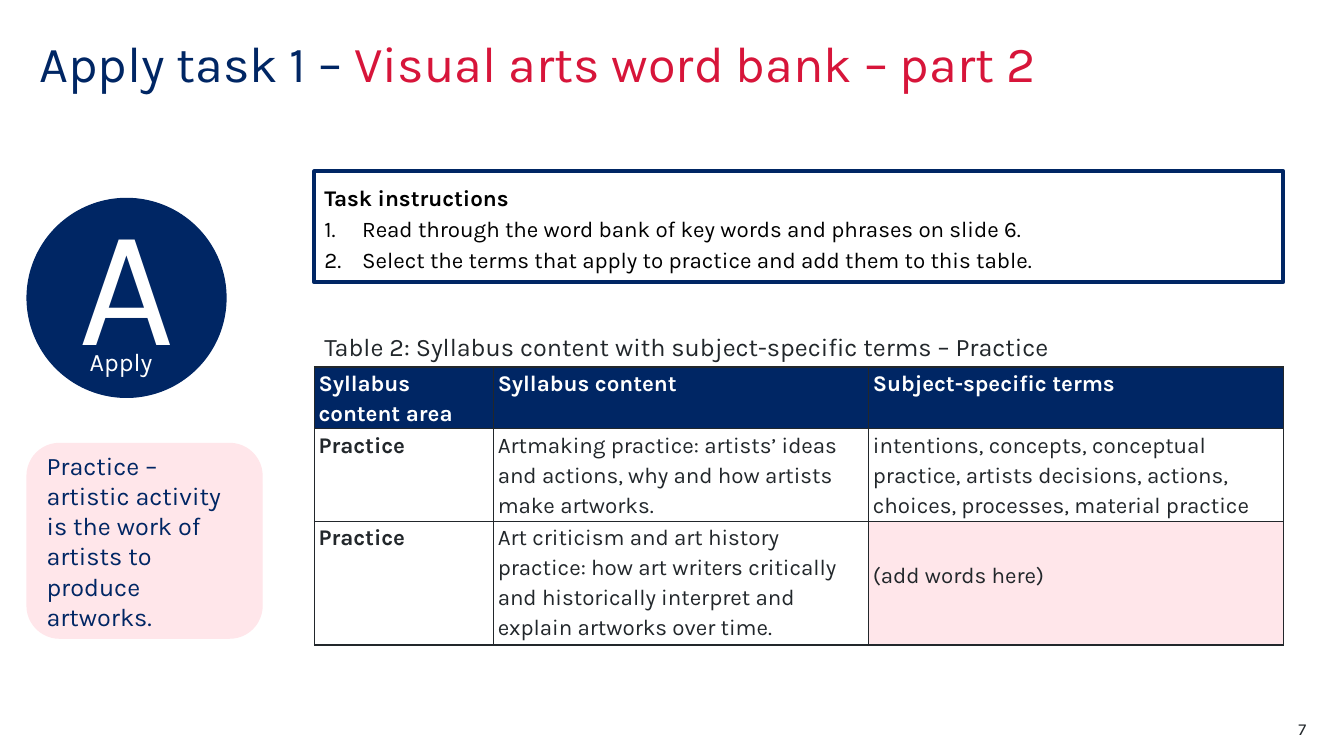
from dataclasses import dataclass

from lxml.etree import SubElement
from pptx import Presentation
from pptx.dml.color import RGBColor
from pptx.enum.shapes import MSO_SHAPE
from pptx.enum.text import MSO_ANCHOR, MSO_AUTO_SIZE, PP_ALIGN
from pptx.oxml.ns import qn
from pptx.util import Pt

COLOURS = {"navy": "002664", "red": "D7153A", "pink": "FFE6EA",
           "white": "FFFFFF", "black": "000000", "ink": "22272B"}
FONT = "Karla"
COLUMN_WIDTHS = (128, 268, 296)
ROW_HEIGHTS = (44, 66, 88)


@dataclass(frozen=True)
class Span:
    """A run of text with its look."""
    text: str
    size: float
    colour: str
    bold: bool = False


@dataclass(frozen=True)
class Line:
    """A paragraph of spans."""
    spans: tuple[Span, ...]
    align: PP_ALIGN = PP_ALIGN.LEFT
    spacing: float = 1.0
    numbered: bool = False


@dataclass(frozen=True)
class Panel:
    """A block of text, with an outlined preset shape if one is named."""
    bounds: tuple[float, float, float, float]
    lines: tuple[Line, ...]
    margins: tuple[float, float, float, float] = (7.2, 3.6, 7.2, 3.6)
    anchor: MSO_ANCHOR = MSO_ANCHOR.MIDDLE
    preset: MSO_SHAPE | None = None
    fill: str = "white"
    outline: str = "navy"
    outline_width: float = 1


@dataclass(frozen=True)
class Entry:
    """The content of a table cell."""
    text: str
    colour: str = "ink"
    bold: bool = False
    fill: str | None = None
    top: float = 0


INSTRUCTIONS = (
    Line((Span("Task instructions", 16, "black", True),), spacing=1.15),
    *(Line((Span(step, 16, "black"),), spacing=1.15, numbered=True) for step in (
        "Read through the word bank of key words and phrases on slide 6.",
        "Select the terms that apply to practice and add them to this table.")),
)

PANELS = (
    Panel((19.4, 141.8, 142, 142),
          (Line((Span("A", 120, "white"),), PP_ALIGN.CENTER),),
          margins=(7.2, 3.6, 7.2, 31.6), preset=MSO_SHAPE.OVAL, fill="navy"),
    Panel((64.1, 247.7, 52.6, 34.6), (Line((Span("Apply", 18, "white"),)),),
          margins=(0, 0, 0, 0), anchor=MSO_ANCHOR.TOP),
    Panel((224.6, 122.4, 692, 79.2), INSTRUCTIONS,
          preset=MSO_SHAPE.RECTANGLE, outline_width=3),
    Panel((19.4, 316.8, 167.8, 139),
          (Line((Span("Practice – artistic activity is the work of artists to "
                      "produce artworks.", 18, "navy"),)),),
          preset=MSO_SHAPE.ROUNDED_RECTANGLE, fill="pink", outline="pink"),
    Panel((224.6, 233.3, 692, 28.8),
          (Line((Span("Table 2: Syllabus content with subject-specific terms – Practice",
                      18, "ink"),)),)),
    Panel((876.2, 513.4, 56.9, 14.4),
          (Line((Span("7", 12, "ink"),), PP_ALIGN.RIGHT),),
          margins=(0, 0, 0, 0), anchor=MSO_ANCHOR.TOP),
)

HEADINGS = ("Syllabus content area", "Syllabus content", "Subject-specific terms")
ROWS = (
    tuple(Entry(heading, "white", True, "navy") for heading in HEADINGS),
    (Entry("Practice", bold=True),
     Entry("Artmaking practice: artists’ ideas and actions, why and how artists "
           "make artworks."),
     Entry("intentions, concepts, conceptual practice, artists decisions, actions, "
           "choices, processes, material practice")),
    (Entry("Practice", bold=True),
     Entry("Art criticism and art history practice: how art writers critically and "
           "historically interpret and explain artworks over time."),
     Entry("(add words here)", fill="pink", top=27)),
)


def rgb(name: str) -> RGBColor:
    """Look up a colour by name."""
    return RGBColor.from_string(COLOURS[name])


def write_lines(frame, lines: tuple[Line, ...]) -> None:
    """Fill a text frame with paragraphs, run by run."""
    for index, line in enumerate(lines):
        para = frame.add_paragraph() if index else frame.paragraphs[0]
        para.alignment = line.align
        para.line_spacing = line.spacing
        if line.numbered:
            properties = para._p.get_or_add_pPr()
            properties.set("marL", str(Pt(27)))
            properties.set("indent", str(-Pt(27)))
            SubElement(properties, qn("a:buFont"), typeface="+mj-lt")
            SubElement(properties, qn("a:buAutoNum"), type="arabicPeriod")
        for span in line.spans:
            run = para.add_run()
            run.text = span.text
            run.font.name = FONT
            run.font.size = Pt(span.size)
            run.font.bold = span.bold
            run.font.color.rgb = rgb(span.colour)


def set_margins(holder, margins: tuple[float, float, float, float]) -> None:
    """Set left, top, right and bottom margins of a frame or cell."""
    for side, margin in zip(("left", "top", "right", "bottom"), margins):
        setattr(holder, f"margin_{side}", Pt(margin))


def draw_title(page) -> None:
    """Place and write the title placeholder."""
    title = page.shapes.title
    title.left, title.top, title.width, title.height = map(Pt, (28, 28, 793.4, 79.2))
    frame = title.text_frame
    frame.auto_size = MSO_AUTO_SIZE.NONE
    frame.vertical_anchor = MSO_ANCHOR.TOP
    set_margins(frame, (0, 0, 0, 0))
    write_lines(frame, (Line((Span("Apply task 1 – ", 36, "navy"),
                              Span("Visual arts word bank – part 2", 36, "red")),
                             spacing=0.9),))


def draw_panel(page, panel: Panel) -> None:
    """Draw a text box or a filled shape with text."""
    bounds = map(Pt, panel.bounds)
    if panel.preset is None:
        box = page.shapes.add_textbox(*bounds)
    else:
        box = page.shapes.add_shape(panel.preset, *bounds)
        box.shadow.inherit = False
        box.fill.solid()
        box.fill.fore_color.rgb = rgb(panel.fill)
        box.line.color.rgb = rgb(panel.outline)
        box.line.width = Pt(panel.outline_width)
    frame = box.text_frame
    frame.word_wrap = True
    frame.vertical_anchor = panel.anchor
    set_margins(frame, panel.margins)
    write_lines(frame, panel.lines)


def fill_cell(cell, entry: Entry) -> None:
    """Write a table cell with its borders and fill."""
    properties = cell._tc.get_or_add_tcPr()
    for side in ("lnL", "lnR", "lnT", "lnB"):
        border = SubElement(properties, qn(f"a:{side}"), w=str(Pt(1)))
        solid = SubElement(border, qn("a:solidFill"))
        SubElement(solid, qn("a:srgbClr"), val=COLOURS["ink"])
    if entry.fill:
        cell.fill.solid()
        cell.fill.fore_color.rgb = rgb(entry.fill)
    else:
        cell.fill.background()
    set_margins(cell, (3, entry.top, 3, 0))
    span = Span(entry.text, 16, entry.colour, entry.bold)
    write_lines(cell.text_frame, (Line((span,), spacing=1.15),))


def draw_table(page) -> None:
    """Draw the syllabus table."""
    bounds = map(Pt, (224.6, 262.1, sum(COLUMN_WIDTHS), sum(ROW_HEIGHTS)))
    table = page.shapes.add_table(len(ROWS), len(COLUMN_WIDTHS), *bounds).table
    table.horz_banding = False
    for column, width in zip(table.columns, COLUMN_WIDTHS):
        column.width = Pt(width)
    for row, height, entries in zip(table.rows, ROW_HEIGHTS, ROWS):
        row.height = Pt(height)
        for cell, entry in zip(row.cells, entries):
            fill_cell(cell, entry)


def main() -> None:
    """Build the slide and save it."""
    deck = Presentation()
    deck.slide_width, deck.slide_height = Pt(960), Pt(540)
    page = deck.slides.add_slide(deck.slide_layouts[5])
    draw_title(page)
    for panel in PANELS:
        draw_panel(page, panel)
    draw_table(page)
    deck.save("out.pptx")


if __name__ == "__main__":
    main()
